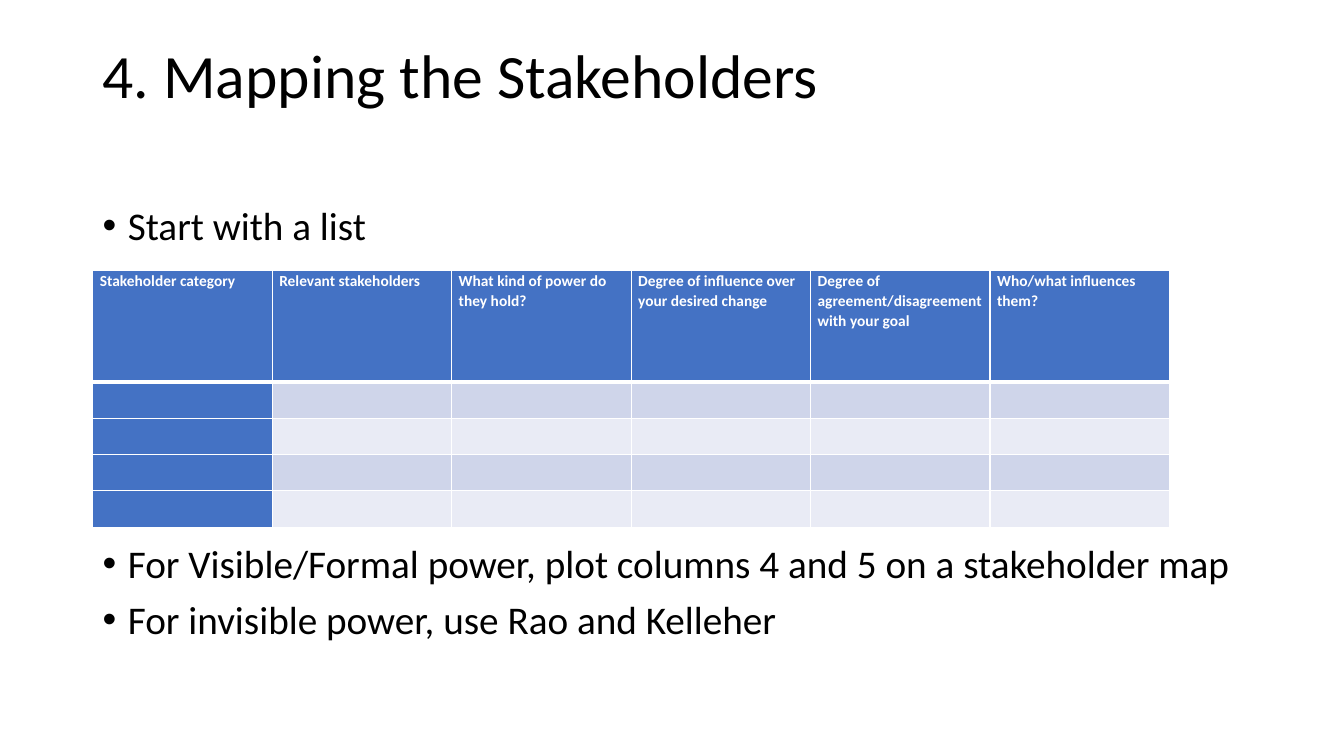
from lxml.etree import SubElement
from pptx import Presentation
from pptx.dml.color import RGBColor
from pptx.enum.text import MSO_ANCHOR
from pptx.oxml.ns import qn
from pptx.util import Inches, Pt

BLACK = RGBColor(0x00, 0x00, 0x00)
WHITE = RGBColor(0xFF, 0xFF, 0xFF)
BLUE = RGBColor(0x44, 0x72, 0xC4)
BAND_DARK = RGBColor(0xCF, 0xD5, 0xEA)
BAND_LIGHT = RGBColor(0xE9, 0xEB, 0xF5)

LEFT = 0.92
HEADINGS = [
    "Stakeholder category",
    "Relevant stakeholders",
    "What kind of power do they hold?",
    "Degree of influence over your desired change",
    "Degree of agreement/disagreement with your goal",
    "Who/what influences them?",
]
ROW_HEIGHTS = [1.11] + [0.36] * 4
COLUMN_WIDTH = 1.78


class SlideBuilder:
    font_name = "Calibri"

    def __init__(self, page):
        self.page = page

    def style(self, para, size, color, bold=False):
        for span in para.runs:
            span.font.name = self.font_name
            span.font.size = Pt(size)
            span.font.color.rgb = color
            span.font.bold = bold

    def text(self, top, height, lines, size, bulleted=False):
        box = self.page.shapes.add_textbox(
            Inches(LEFT), Inches(top), Inches(11.5), Inches(height))
        frame = box.text_frame
        frame.word_wrap = True
        frame.vertical_anchor = MSO_ANCHOR.TOP
        frame.text = "\n".join(lines)
        for index, para in enumerate(frame.paragraphs):
            para.line_spacing = 0.9
            if index:
                para.space_before = Pt(10)
            if bulleted:
                self.bullet(para)
            self.style(para, size, BLACK)

    def bullet(self, para):
        properties = para._p.get_or_add_pPr()
        properties.set("marL", str(Inches(0.25)))
        properties.set("indent", str(Inches(-0.25)))
        SubElement(properties, qn("a:buFont"), typeface="Arial")
        SubElement(properties, qn("a:buChar"), char="•")

    def borders(self, cell, bottom_width):
        properties = cell._tc.get_or_add_tcPr()
        widths = {"a:lnL": 1, "a:lnR": 1, "a:lnT": 1, "a:lnB": bottom_width}
        for side, width in widths.items():
            line = SubElement(properties, qn(side), w=str(Pt(width)))
            fill = SubElement(line, qn("a:solidFill"))
            SubElement(fill, qn("a:srgbClr"), val=str(WHITE))

    def table(self, top, headings, row_heights, column_width):
        table = self.page.shapes.add_table(
            len(row_heights), len(headings), Inches(LEFT), Inches(top),
            Inches(column_width * len(headings)), Inches(sum(row_heights))).table
        for column in table.columns:
            column.width = Inches(column_width)
        for row_index, height in enumerate(row_heights):
            table.rows[row_index].height = Inches(height)
            band = BAND_DARK if row_index % 2 else BAND_LIGHT
            for column_index, heading in enumerate(headings):
                cell = table.cell(row_index, column_index)
                is_heading = row_index == 0
                cell.margin_left = cell.margin_right = Inches(0.07)
                cell.margin_top = cell.margin_bottom = 0
                self.borders(cell, 3 if is_heading else 1)
                cell.fill.solid()
                cell.fill.fore_color.rgb = (
                    BLUE if is_heading or column_index == 0 else band)
                if is_heading:
                    cell.text_frame.text = heading
                    para = cell.text_frame.paragraphs[0]
                    para.line_spacing = 1.06
                    para.space_after = Pt(8)
                    self.style(para, 11, WHITE, bold=True)


def main():
    deck = Presentation()
    deck.slide_width = Inches(13.33)
    deck.slide_height = Inches(7.5)
    builder = SlideBuilder(deck.slides.add_slide(deck.slide_layouts[6]))
    builder.text(0.4, 1.45, ["4. Mapping the Stakeholders"], 44)
    builder.text(2, 0.6, ["Start with a list"], 28, bulleted=True)
    builder.table(2.68, HEADINGS, ROW_HEIGHTS, COLUMN_WIDTH)
    builder.text(5.35, 1.41, [
        "For Visible/Formal power, plot columns 4 and 5 on a stakeholder map",
        "For invisible power, use Rao and Kelleher",
    ], 28, bulleted=True)
    deck.save("out.pptx")


if __name__ == "__main__":
    main()
